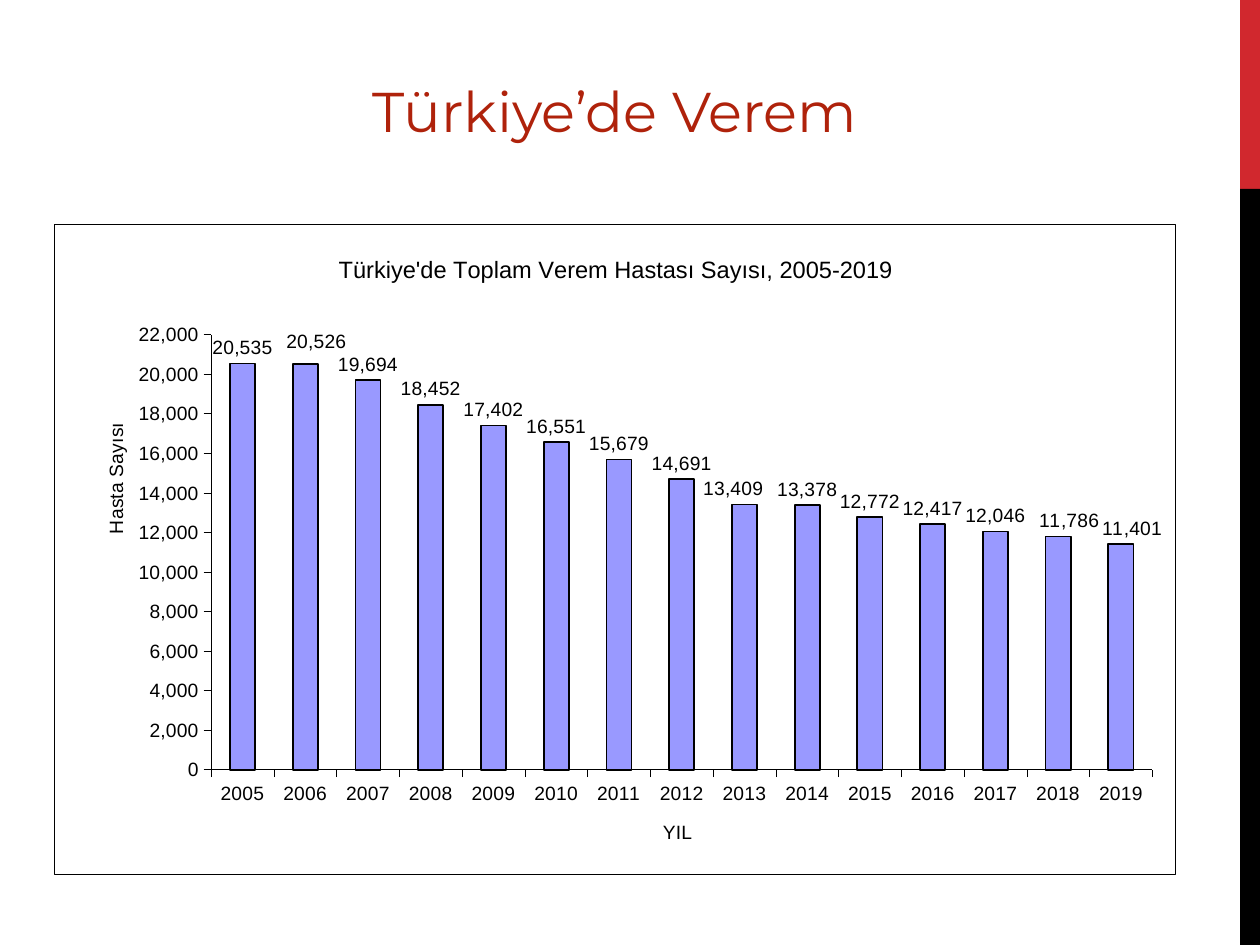
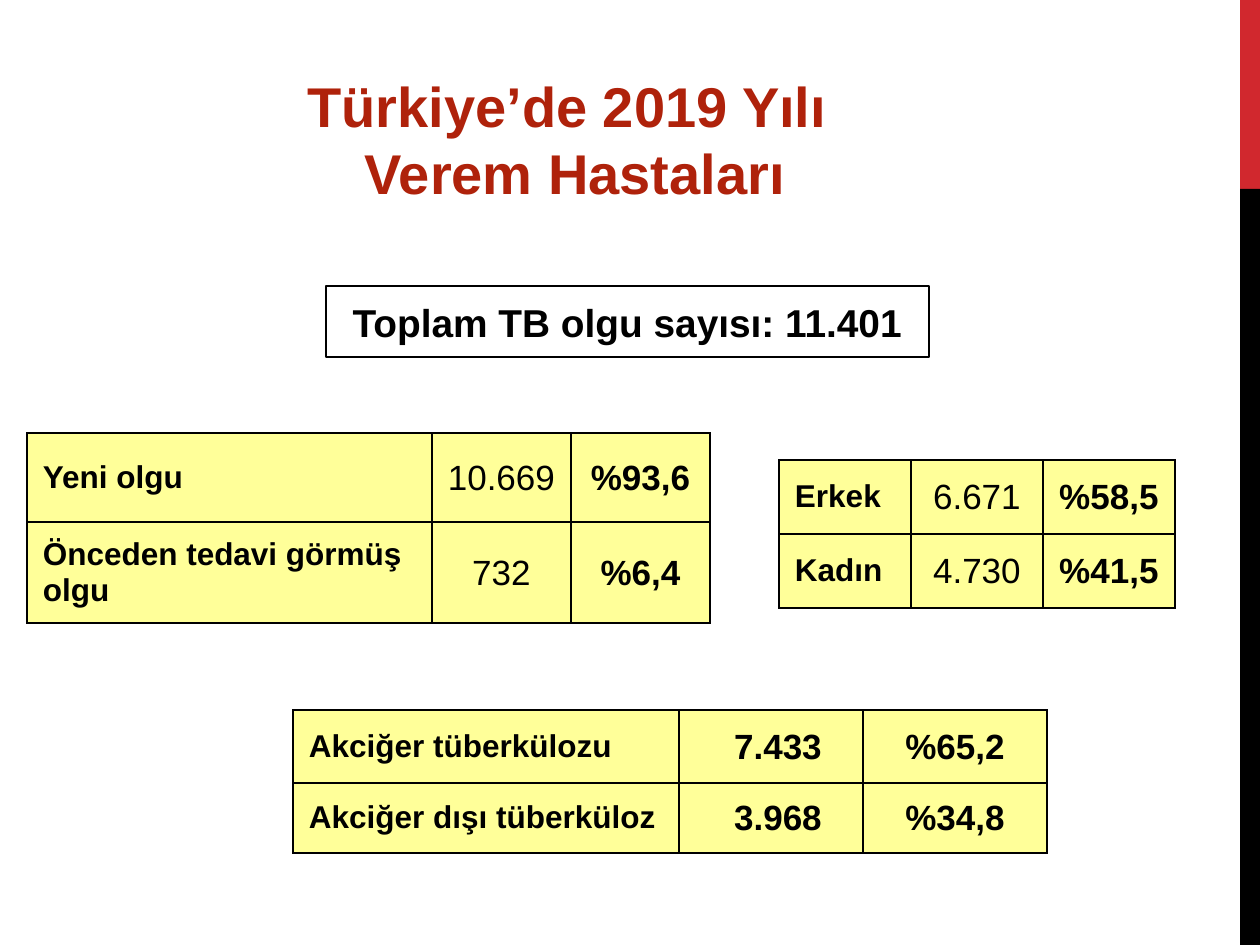
from lxml import etree
from pptx import Presentation, util as u
from pptx.chart.data import CategoryChartData
from pptx.dml.color import RGBColor
from pptx.enum import chart as ch, shapes, text
from pptx.oxml import ns

EMU_PER_PX = 914400 / 126
SLIDE_W, SLIDE_H = 1260, 945
RED, BLACK, WHITE = "D1282E", "000000", "FFFFFF"
TITLE_RED, BAR_BLUE, CELL_YELLOW = "AF220B", "9999FF", "FFFF99"
CENTER = text.PP_ALIGN.CENTER

YEARS = [str(year) for year in range(2005, 2020)]
PATIENTS = [20535, 20526, 19694, 18452, 17402, 16551, 15679, 14691,
            13409, 13378, 12772, 12417, 12046, 11786, 11401]
# Labels moved off their bars: point index -> shift as a share of the chart
LABEL_SHIFTS = {1: (0.01, -0.01), 8: (-0.01, 0), 13: (0.01, 0), 14: (0.01, 0)}


def px(length):
    return u.Emu(round(length * EMU_PER_PX))


def color(hex_code):
    return RGBColor.from_string(hex_code)


def paint(fill, hex_code):
    fill.solid()
    fill.fore_color.rgb = color(hex_code)


def draw_line(line, hex_code, points):
    line.color.rgb = color(hex_code)
    line.width = u.Pt(points)


def style_font(font, size, hex_code=BLACK, bold=False, face="Arial"):
    font.size, font.bold, font.name = u.Pt(size), bold, face
    font.color.rgb = color(hex_code)


def add_rect(slide, box, fill):
    rect = slide.shapes.add_shape(shapes.MSO_SHAPE.RECTANGLE, *map(px, box))
    rect.shadow.inherit = False
    paint(rect.fill, fill)
    rect.line.fill.background()
    return rect


# Side band and title shared by both slides
def start_slide(deck, title, box, face, bold):
    slide = deck.slides.add_slide(deck.slide_layouts[6])
    for top, height, fill in ((0, 189, RED), (189, 756, BLACK)):
        add_rect(slide, (1240, top, 20, height), fill)
    heading = slide.shapes.add_textbox(*map(px, box)).text_frame
    heading.word_wrap = True
    heading.text = title
    for paragraph in heading.paragraphs:
        paragraph.alignment = CENTER
        style_font(paragraph.runs[0].font, 32, TITLE_RED, bold, face)
    return slide


# Manual chart layout, as shares of the chart area
def set_layout(parent, index, x, y, size=None):
    for old in parent.findall(ns.qn("c:layout")):
        parent.remove(old)
    layout = etree.Element(ns.qn("c:layout"))
    manual = etree.SubElement(layout, ns.qn("c:manualLayout"))
    settings = []
    if size:
        settings.append(("layoutTarget", "inner"))
    if not parent.tag.endswith("dLbl"):
        settings += [("xMode", "edge"), ("yMode", "edge")]
    settings += [("x", x), ("y", y)]
    if size:
        settings += zip("wh", size)
    for name, value in settings:
        etree.SubElement(manual, ns.qn("c:" + name)).set("val", str(value))
    parent.insert(index, layout)


def set_chart_title(title, words, size, x, y):
    title.text_frame.text = words
    style_font(title.text_frame.paragraphs[0].runs[0].font, size)
    set_layout(title._element, 1, x, y)


def style_axis(axis, words, x, y):
    axis.has_title = True
    set_chart_title(axis.axis_title, words, 11, x, y)
    axis.major_tick_mark = ch.XL_TICK_MARK.OUTSIDE
    draw_line(axis.format.line, BLACK, 0.25)


def frame_chart(chart):
    frame = etree.fromstring(
        f'<c:spPr {ns.nsdecls("c", "a")}><a:solidFill><a:srgbClr val="{WHITE}"/></a:solidFill>'
        f'<a:ln w="3175"><a:solidFill><a:srgbClr val="{BLACK}"/></a:solidFill></a:ln></c:spPr>')
    chart._chartSpace.find(ns.qn("c:chart")).addnext(frame)


def add_patient_chart(slide, box):
    data = CategoryChartData(number_format="#,##0")
    data.categories = YEARS
    data.add_series("Hasta Sayısı", PATIENTS)
    chart = slide.shapes.add_chart(
        ch.XL_CHART_TYPE.COLUMN_CLUSTERED, *map(px, box), data).chart
    style_font(chart.font, 11)
    chart.has_legend = False
    frame_chart(chart)
    chart.has_title = True
    set_chart_title(chart.chart_title, "Türkiye'de Toplam Verem Hastası Sayısı, 2005-2019",
                    13.5, 0.25, 0.04)

    # Axes
    style_axis(chart.category_axis, "YIL", 0.54, 0.91)
    counts = chart.value_axis
    style_axis(counts, "Hasta Sayısı", 0.04, 0.3)
    counts.axis_title.text_frame._txBody.bodyPr.set("rot", "-5400000")
    counts.minimum_scale, counts.maximum_scale, counts.major_unit = 0, 22000, 2000
    counts.tick_labels.number_format = "#,##0"
    counts.tick_labels.number_format_is_linked = False
    draw_line(counts.major_gridlines.format.line, WHITE, 0.25)

    # Bars and their labels
    plot = chart.plots[0]
    plot.gap_width, plot.vary_by_categories = 150, False
    set_layout(chart._chartSpace.chart.plotArea, 0, 0.14, 0.17, (0.84, 0.67))
    bars = plot.series[0]
    paint(bars.format.fill, BAR_BLUE)
    draw_line(bars.format.line, BLACK, 1)
    labels = bars.data_labels
    labels.show_value = True
    labels.number_format, labels.number_format_is_linked = "#,##0", False
    labels.position = ch.XL_LABEL_POSITION.OUTSIDE_END
    style_font(labels.font, 11)
    for index, shift in LABEL_SHIFTS.items():
        label = bars.points[index].data_label
        label.position = ch.XL_LABEL_POSITION.OUTSIDE_END
        style_font(label.font, 11)
        set_layout(label._dLbl, 1, *shift)


def add_total(slide, box):
    total = add_rect(slide, box, WHITE)
    draw_line(total.line, BLACK, 0.75)
    frame = total.text_frame
    frame.word_wrap = True
    frame.vertical_anchor = text.MSO_ANCHOR.MIDDLE
    frame.text = "Toplam TB olgu sayısı: 11.401"
    frame.paragraphs[0].alignment = CENTER
    style_font(frame.paragraphs[0].runs[0].font, 22.2, bold=True)


def border_cell(cell):
    properties = cell._tc.get_or_add_tcPr()
    for index, side in enumerate("LRTB"):
        properties.insert(index, etree.fromstring(
            f'<a:ln{side} {ns.nsdecls("a")} w="12700"><a:solidFill>'
            f'<a:srgbClr val="{BLACK}"/></a:solidFill></a:ln{side}>'))


# Case table: label, count and share in each row
def add_case_table(slide, left, top, widths, heights, rows, bold_count=False, count_inset=1):
    box = (left, top, sum(widths), sum(heights))
    table = slide.shapes.add_table(len(rows), len(widths), *map(px, box)).table
    table.first_row = table.horz_banding = False
    for column, width in zip(table.columns, widths):
        column.width = px(width)
    for row, height in zip(table.rows, heights):
        row.height = px(height)
    # Per column: size, bold, alignment, margins (left, top, right, bottom)
    styles = ((18, True, text.PP_ALIGN.LEFT, (16, 6, 16, 6)),
              (20, bold_count, CENTER, (count_inset, 1, 1, 0)),
              (20, True, CENTER, (1, 1, 1, 0)))
    for row, words in zip(table.rows, rows):
        for cell, word, (size, bold, align, margins) in zip(row.cells, words, styles):
            cell.text = word
            cell.vertical_anchor = text.MSO_ANCHOR.MIDDLE
            (cell.margin_left, cell.margin_top,
             cell.margin_right, cell.margin_bottom) = map(px, margins)
            paragraph = cell.text_frame.paragraphs[0]
            paragraph.alignment = align
            style_font(paragraph.runs[0].font, size, bold=bold)
            paint(cell.fill, CELL_YELLOW)
            border_cell(cell)


def build_trend_slide(deck):
    slide = start_slide(deck, "Türkiye’de Verem", (223, 70, 784, 81), "Montserrat", False)
    add_patient_chart(slide, (54, 224, 1121, 650))


def build_cases_slide(deck):
    slide = start_slide(deck, "Türkiye’de 2019 Yılı \nVerem Hastaları",
                        (104, 65, 942, 149), "Arial", True)
    add_total(slide, (326, 286, 603, 71))
    add_case_table(slide, 779, 460, (132, 132, 132), (74, 74),
                   (("Erkek", "6.671", "%58,5"), ("Kadın", "4.730", "%41,5")))
    add_case_table(slide, 293, 710, (386, 184, 184), (73, 70),
                   (("Akciğer tüberkülozu", "7.433", "%65,2"),
                    ("Akciğer dışı tüberküloz", "3.968", "%34,8")),
                   bold_count=True, count_inset=15)
    add_case_table(slide, 27, 433, (405, 139, 139), (89, 101),
                   (("Yeni olgu", "10.669", "%93,6"),
                    ("Önceden tedavi görmüş olgu", "732", "%6,4")))


def main():
    deck = Presentation()
    deck.slide_width, deck.slide_height = px(SLIDE_W), px(SLIDE_H)
    build_trend_slide(deck)
    build_cases_slide(deck)
    deck.save("out.pptx")


if __name__ == "__main__":
    main()
